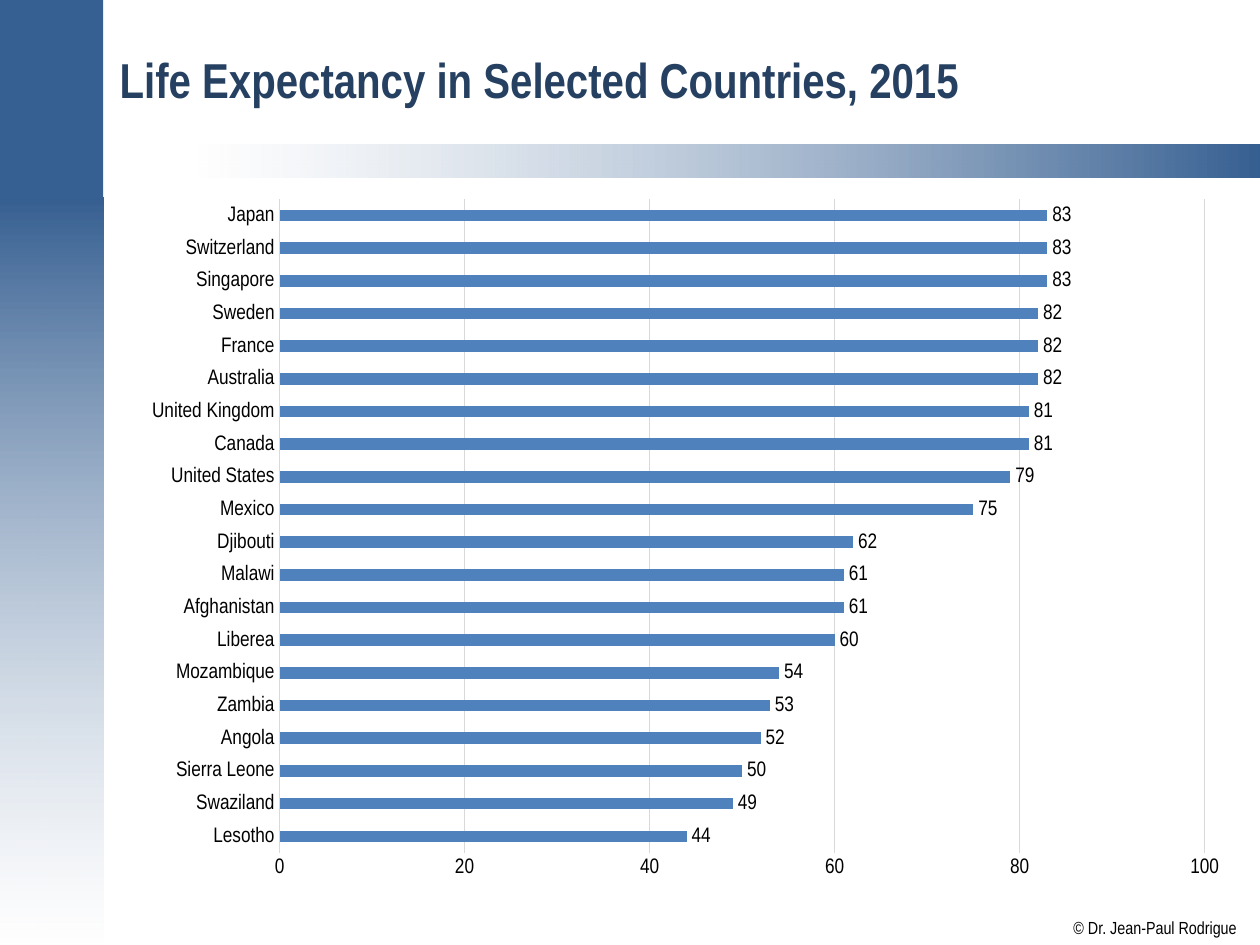
from pptx import Presentation
from pptx.chart.data import CategoryChartData
from pptx.dml.color import RGBColor
from pptx.enum.chart import XL_CHART_TYPE, XL_LABEL_POSITION, XL_TICK_MARK
from pptx.enum.shapes import MSO_SHAPE
from pptx.enum.text import MSO_ANCHOR, PP_ALIGN
from pptx.oxml import parse_xml
from pptx.oxml.ns import nsdecls, qn
from pptx.util import Inches, Pt

COLORS = {
    "band": "376092",
    "white": "FFFFFF",
    "title": "254061",
    "text": "000000",
    "bar": "4F81BD",
    "grid": "D9D9D9",
}
FONT = "Arial Narrow"


def color(name):
    return RGBColor.from_string(COLORS[name])


def style_font(font, size, name="text", bold=False):
    font.name = FONT
    font.size = Pt(size)
    font.bold = bold
    font.color.rgb = color(name)


presentation = Presentation()
presentation.slide_width = Inches(10)
presentation.slide_height = Inches(7.5)
slide = presentation.slides.add_slide(presentation.slide_layouts[5])

# Decorative bands: left, top, width, height, start, end, angle, opacity of white
bands = [
    (-0.01, 1.57, 0.83, 5.93, "band", "white", 270, 51),
    (1.57, 1.15, 8.43, 0.26, "white", "band", 0, 50),
    (-0.01, -0.01, 0.83, 1.58, "band", "band", None, None),
]
for left, top, width, height, start, end, angle, opacity in bands:
    band = slide.shapes.add_shape(
        MSO_SHAPE.RECTANGLE, Inches(left), Inches(top), Inches(width), Inches(height))
    band.shadow.inherit = False
    band.line.fill.background()
    if angle is None:
        band.fill.solid()
        band.fill.fore_color.rgb = color(start)
        continue
    band.fill.gradient()
    band.fill.gradient_angle = angle
    for stop, name in zip(band.fill.gradient_stops, (start, end)):
        stop.color.rgb = color(name)
    for stop_color in band._element.spPr.iter(qn("a:srgbClr")):
        if stop_color.get("val") == COLORS["white"]:
            stop_color.append(parse_xml(f'<a:alpha {nsdecls("a")} val="{opacity * 1000}"/>'))

# Copyright line
copyright_line = slide.shapes.add_textbox(
    Inches(8.52), Inches(7.28), Inches(1.3), Inches(0.17))
frame = copyright_line.text_frame
frame.margin_left = frame.margin_right = frame.margin_top = frame.margin_bottom = 0
frame.word_wrap = False
frame.text = "© Dr. Jean-Paul Rodrigue"
style_font(frame.paragraphs[0].runs[0].font, 10)

# Title
title = slide.shapes.title
title.left, title.top = Inches(0.85), Inches(0.11)
title.width, title.height = Inches(8.98), Inches(1.04)
title.text_frame.text = "Life Expectancy in Selected Countries, 2015"
title.text_frame.vertical_anchor = MSO_ANCHOR.MIDDLE
heading = title.text_frame.paragraphs[0]
heading.alignment = PP_ALIGN.LEFT
style_font(heading.runs[0].font, 28, "title", bold=True)

# Chart data, from the bottom bar to the top
life_expectancy = {
    "Lesotho": 44, "Swaziland": 49, "Sierra Leone": 50, "Angola": 52,
    "Zambia": 53, "Mozambique": 54, "Liberea": 60, "Afghanistan": 61,
    "Malawi": 61, "Djibouti": 62, "Mexico": 75, "United States": 79,
    "Canada": 81, "United Kingdom": 81, "Australia": 82, "France": 82,
    "Sweden": 82, "Singapore": 83, "Switzerland": 83, "Japan": 83,
}
data = CategoryChartData()
data.categories = list(life_expectancy)
data.add_series("Series 1", list(life_expectancy.values()))
chart = slide.shapes.add_chart(
    XL_CHART_TYPE.BAR_CLUSTERED, Inches(0.83), Inches(1.43),
    Inches(9.02), Inches(5.79), data).chart
chart.has_legend = False
chart.has_title = False
style_font(chart.font, 10)

# Bars and value labels
plot = chart.plots[0]
plot.gap_width = 182
plot.vary_by_categories = False
bars = plot.series[0]
bars.format.fill.solid()
bars.format.fill.fore_color.rgb = color("bar")
labels = bars.data_labels
labels.show_value = True
labels.position = XL_LABEL_POSITION.OUTSIDE_END
style_font(labels.font, 12)

# Axes
countries, years = chart.category_axis, chart.value_axis
for axis in (countries, years):
    axis.major_tick_mark = axis.minor_tick_mark = XL_TICK_MARK.NONE
    style_font(axis.tick_labels.font, 12)
countries.has_major_gridlines = False
years.minimum_scale, years.maximum_scale, years.major_unit = 0, 100, 20
years.has_major_gridlines = True
years.format.line.fill.background()
for line in (countries.format.line, years.major_gridlines.format.line):
    line.color.rgb = color("grid")
    line.width = Pt(0.75)

# Fixed inner plot area
plot_area = chart._chartSpace.chart.plotArea
for layout in plot_area.findall(qn("c:layout")):
    plot_area.remove(layout)
plot_area.insert(0, parse_xml(
    f'<c:layout {nsdecls("c")}><c:manualLayout><c:layoutTarget val="inner"/>'
    '<c:xMode val="edge"/><c:yMode val="edge"/><c:x val="0.154"/><c:y val="0.026"/>'
    '<c:w val="0.814"/><c:h val="0.896"/></c:manualLayout></c:layout>'))

presentation.save("out.pptx")
